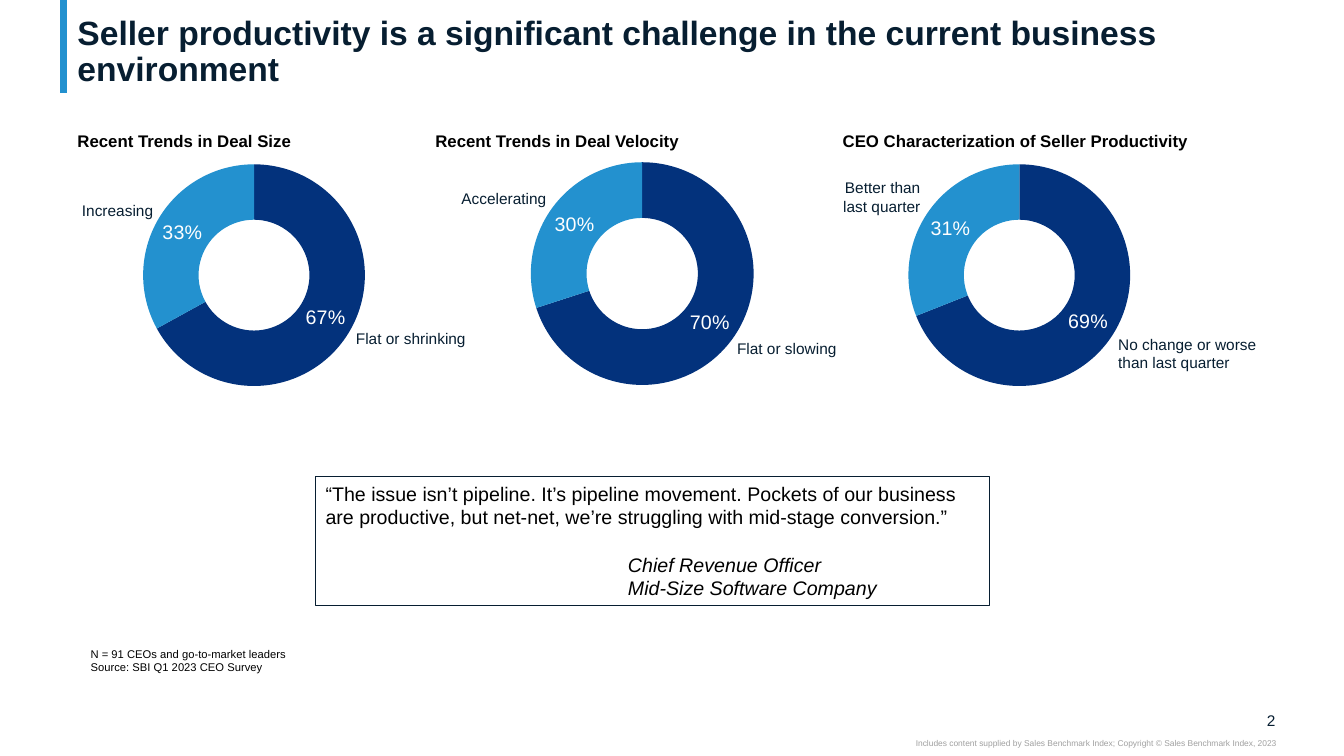
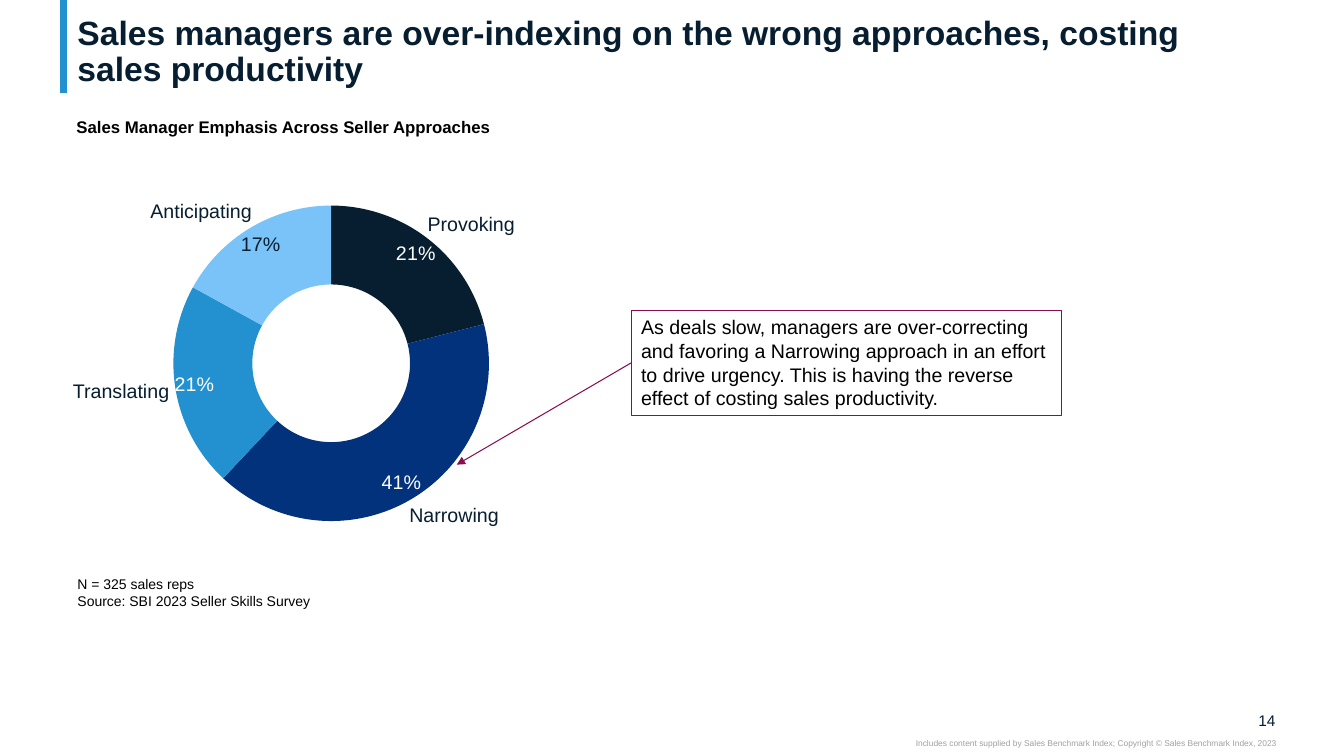
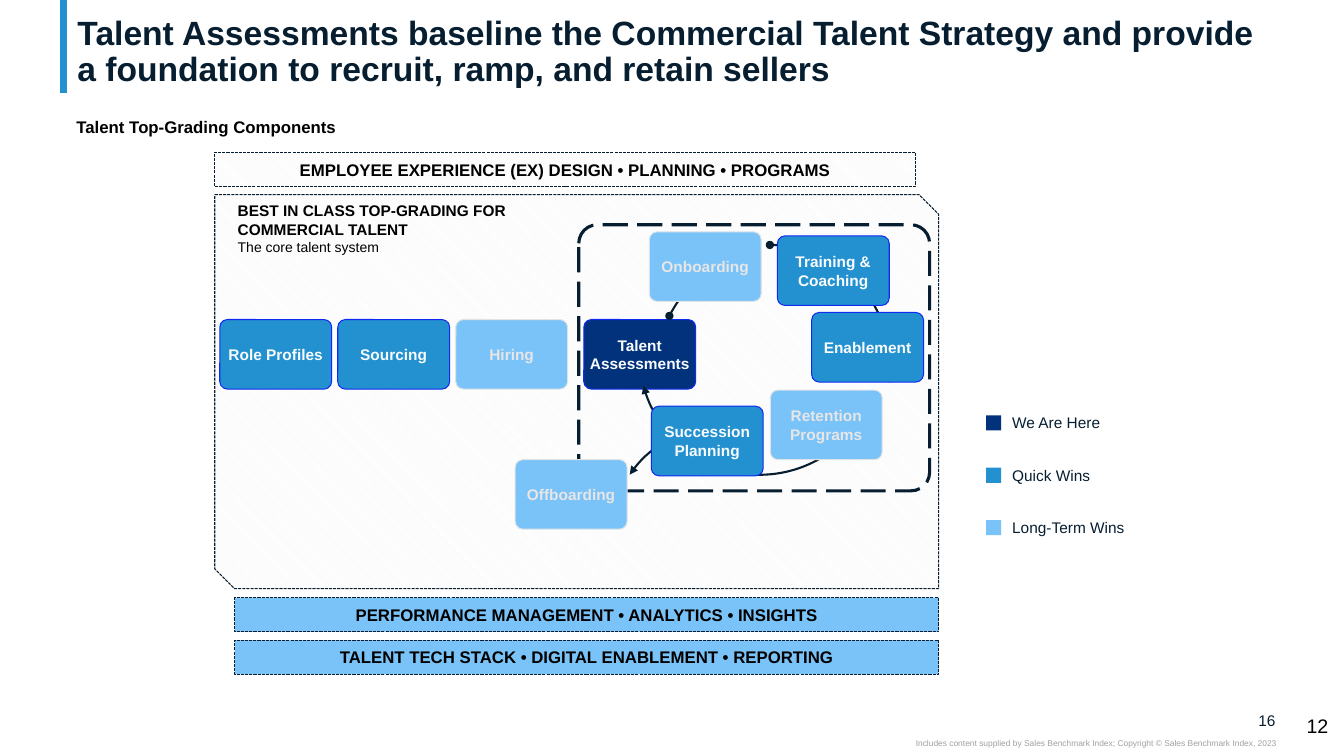
from dataclasses import dataclass
from math import cos, pi, sin
from typing import NamedTuple, Optional

from lxml import etree
from pptx import Presentation
from pptx import util as u
from pptx.chart.data import CategoryChartData
from pptx.dml.color import RGBColor
from pptx.enum import chart as charts
from pptx.enum import dml, shapes, text
from pptx.oxml.ns import qn

CELL = u.Inches(0.1)
COLUMNS, ROWS = 133.3, 75

INK = RGBColor(0x07, 0x1E, 0x31)
NAVY = RGBColor(0x03, 0x32, 0x7C)
BLUE = RGBColor(0x23, 0x91, 0xCF)
SKY = RGBColor(0x7A, 0xC3, 0xF8)
PLUM = RGBColor(0x88, 0x0E, 0x4F)
BLACK = RGBColor(0x00, 0x00, 0x00)
WHITE = RGBColor(0xFF, 0xFF, 0xFF)
NEAR_WHITE = RGBColor(0xF9, 0xFC, 0xFE)
FOOTER_GRAY = RGBColor(0xA0, 0xA0, 0xA0)
MUTED = RGBColor(0xE7, 0xE6, 0xE6)
MUTED_EDGE = RGBColor(0xE0, 0xE3, 0xE6)
VIVID_EDGE = RGBColor(0x0F, 0x2A, 0xF2)
HATCH = RGBColor(0xF2, 0xF2, 0xF2)

FONT = "Arial"
LEFT, CENTER, RIGHT = text.PP_ALIGN.LEFT, text.PP_ALIGN.CENTER, text.PP_ALIGN.RIGHT
TOP, MIDDLE, BOTTOM = text.MSO_ANCHOR.TOP, text.MSO_ANCHOR.MIDDLE, text.MSO_ANCHOR.BOTTOM
PRESET = shapes.MSO_SHAPE
COPYRIGHT = ("Includes content supplied by Sales Benchmark Index; "
             "Copyright © Sales Benchmark Index, 2023")


def grid(cells: float) -> int:
    return int(cells * CELL)


class Frame(NamedTuple):
    """Left, top, width and height in grid cells."""
    left: float
    top: float
    width: float
    height: float

    def lengths(self) -> list[int]:
        return [grid(cells) for cells in self]


class Style(NamedTuple):
    size: float
    color: RGBColor = BLACK
    bold: bool = False
    align: text.PP_ALIGN = LEFT
    anchor: text.MSO_ANCHOR = TOP
    inset: tuple[float, float] = (1, 0.5)
    wrap: bool = True


class Edge(NamedTuple):
    color: RGBColor
    width: float = 0.75
    dash: Optional[dml.MSO_LINE] = None


TITLE = Style(24, INK, True, anchor=BOTTOM, inset=(1, 0))
HEADING = Style(12, bold=True)
PAGE_NUMBER = Style(11, INK, align=RIGHT, anchor=MIDDLE, inset=(0, 0))
FOOTER = Style(6, FOOTER_GRAY, align=RIGHT, inset=(0, 0))
CALLOUT = Style(14)
LEGEND = Style(11, INK)
BAND = Style(12, BLACK, True, CENTER, MIDDLE, (1, 1))
DOTTED = Edge(INK, 0.75, dml.MSO_LINE.SQUARE_DOT)


class Slice(NamedTuple):
    value: int
    fill: RGBColor
    label: str
    place: Frame
    align: text.PP_ALIGN
    ink: RGBColor = WHITE


@dataclass(frozen=True)
class Doughnut:
    frame: Frame
    diameter: float
    label_size: float
    slices: list[Slice]
    outward: float = 0  # shift of the values, as a share of the chart


class Trend(NamedTuple):
    heading: str
    left: float
    doughnut: Doughnut


class Stage(NamedTuple):
    name: str
    left: float
    top: float
    fill: RGBColor = BLUE


class Arc(NamedTuple):
    frame: Frame
    angles: tuple[float, float]
    head: str = "oval"
    tail: str = "triangle"
    rotation: float = 0


def format_runs(para, style: Style) -> None:
    para.alignment = style.align
    for span in para.runs:
        span.font.name = FONT
        span.font.size = u.Pt(style.size)
        span.font.bold = style.bold
        span.font.color.rgb = style.color


def write(shape, content: str, style: Style) -> None:
    frame = shape.text_frame
    frame.text = content
    frame.word_wrap = style.wrap
    frame.vertical_anchor = style.anchor
    frame.margin_left = frame.margin_right = grid(style.inset[0])
    frame.margin_top = frame.margin_bottom = grid(style.inset[1])
    for para in frame.paragraphs:
        format_runs(para, style)


def add_text(page, frame: Frame, content: str, style: Style):
    box = page.shapes.add_textbox(*frame.lengths())
    write(box, content, style)
    return box


def add_preset(page, preset, frame: Frame, fill: Optional[RGBColor] = None,
               edge: Optional[Edge] = None, adjust: tuple[float, ...] = ()):
    shape = page.shapes.add_shape(preset, *frame.lengths())
    shape.shadow.inherit = False
    for index, value in enumerate(adjust):
        shape.adjustments[index] = value
    if fill is None:
        shape.fill.background()
    else:
        shape.fill.solid()
        shape.fill.fore_color.rgb = fill
    if edge is None:
        shape.line.fill.background()
    else:
        draw_edge(shape, edge)
    return shape


def draw_edge(shape, edge: Edge) -> None:
    shape.line.color.rgb = edge.color
    shape.line.width = u.Pt(edge.width)
    if edge.dash is not None:
        shape.line.dash_style = edge.dash


def hatch(shape) -> None:
    shape.fill.patterned()
    shape.fill.pattern = dml.MSO_PATTERN.LIGHT_DOWNWARD_DIAGONAL
    shape.fill.fore_color.rgb = HATCH
    shape.fill.back_color.rgb = WHITE


def add_arrowheads(shape, **ends: str) -> None:
    """Set head and then tail, in the order the schema asks for."""
    outline = shape.element.spPr.find(qn("a:ln"))
    for end, kind in ends.items():
        etree.SubElement(outline, qn(f"a:{end}End"), type=kind)


def add_line(page, start: tuple[float, float], end: tuple[float, float], edge: Edge):
    line = page.shapes.add_connector(
        shapes.MSO_CONNECTOR.STRAIGHT, *[grid(cells) for cells in (*start, *end)])
    draw_edge(line, edge)
    etree.SubElement(line.element.spPr, qn("a:effectLst"))
    return line


def manual_layout(**values: object):
    layout = etree.Element(qn("c:layout"))
    manual = etree.SubElement(layout, qn("c:manualLayout"))
    for name, value in values.items():
        etree.SubElement(manual, qn(f"c:{name}"), val=str(value))
    return layout


def add_doughnut(page, doughnut: Doughnut) -> None:
    data = CategoryChartData(number_format='0"%"')
    data.categories = [str(n + 1) for n in range(len(doughnut.slices))]
    data.add_series("Series 1", [part.value for part in doughnut.slices])
    chart = page.shapes.add_chart(
        charts.XL_CHART_TYPE.DOUGHNUT, *doughnut.frame.lengths(), data).chart
    chart.has_legend = chart.has_title = False
    chart.font.name, chart.font.size = FONT, u.Pt(10)
    chart.font.color.rgb = INK
    chart.plots[0].vary_by_categories = False

    area = chart.element.find(".//" + qn("c:plotArea"))
    for automatic in area.findall(qn("c:layout")):
        area.remove(automatic)
    wide = doughnut.diameter / doughnut.frame.width
    high = doughnut.diameter / doughnut.frame.height
    area.insert(0, manual_layout(
        layoutTarget="inner", xMode="edge", yMode="edge",
        x=(1 - wide) / 2, y=(1 - high) / 2, w=wide, h=high))

    series = chart.plots[0].series[0]
    total, before = sum(part.value for part in doughnut.slices), 0
    for index, part in enumerate(doughnut.slices):
        point = series.points[index]
        point.format.fill.solid()
        point.format.fill.fore_color.rgb = part.fill
        font = point.data_label.font
        font.name, font.size = FONT, u.Pt(14)
        font.color.rgb = part.ink
        angle = 2 * pi * (before + part.value / 2) / total
        before += part.value
        label = series.data_labels._element.findall(qn("c:dLbl"))[index]
        number = etree.Element(qn("c:numFmt"), formatCode='0"%"', sourceLinked="0")
        label.insert(1, number)
        if doughnut.outward:
            label.insert(1, manual_layout(x=doughnut.outward * sin(angle),
                                          y=-doughnut.outward * cos(angle)))
        add_text(page, part.place, part.label,
                 Style(doughnut.label_size, INK, align=part.align,
                       anchor=MIDDLE, inset=(0, 0), wrap=False))
    for leader in chart.element.iter(qn("c:showLeaderLines")):
        leader.set("val", "0")


def add_page(deck, title: str, number: int):
    """Start a slide with the accent bar, title, page number and footer."""
    page = deck.slides.add_slide(deck.slide_layouts[6])
    add_line(page, (6.3, 0), (6.3, 9.2), Edge(BLUE, 5))
    add_text(page, Frame(123.2, 70.5, 3.3, 1.9), str(number), PAGE_NUMBER)
    add_text(page, Frame(75, 73.2, 51.6, 1), COPYRIGHT, FOOTER)
    heading = add_text(page, Frame(6.7, 0.4, 119.9, 8.4), title, TITLE)
    heading.text_frame.paragraphs[0].line_spacing = 0.9
    return page


def add_heading(page, content: str) -> None:
    add_text(page, Frame(6.6, 11.1, 63.7, 3), content, HEADING)


TRENDS = [
    Trend("Recent Trends in Deal Size", 6.7, Doughnut(Frame(10.6, 15.4, 29.2, 23.8), 22, 11, [
        Slice(67, NAVY, "Flat or shrinking", Frame(35.3, 32.7, 11.2, 1.8), LEFT),
        Slice(33, BLUE, "Increasing", Frame(8, 20, 7.2, 1.8), RIGHT)])),
    Trend("Recent Trends in Deal Velocity", 42.2, Doughnut(Frame(49.1, 15.2, 29.2, 23.9), 22.1, 11, [
        Slice(70, NAVY, "Flat or slowing", Frame(73.1, 33.7, 10.2, 1.8), LEFT),
        Slice(30, BLUE, "Accelerating", Frame(45.4, 18.8, 8.8, 1.8), RIGHT)])),
    Trend("CEO Characterization of Seller Productivity", 82.6, Doughnut(Frame(86.5, 15.4, 29.2, 23.8), 22, 11, [
        Slice(69, NAVY, "No change or worse\nthan last quarter", Frame(110.9, 33.2, 14.5, 3.7), LEFT),
        Slice(31, BLUE, "Better than\nlast quarter", Frame(83.2, 17.7, 8.1, 3.7), RIGHT)])),
]

EMPHASIS = Doughnut(Frame(16.3, 19.5, 33.1, 33.1), 31.3, 14, [
    Slice(21, INK, "Provoking", Frame(42.4, 21, 8.9, 2.3), LEFT),
    Slice(41, NAVY, "Narrowing", Frame(40.6, 49.9, 9.4, 2.3), LEFT),
    Slice(21, BLUE, "Translating", Frame(7.2, 37.6, 9.6, 2.3), RIGHT),
    Slice(17, SKY, "Anticipating", Frame(14.3, 19.8, 10.7, 2.3), RIGHT, INK)], outward=0.06)

PIPELINE = [
    Stage("Role Profiles", 21.8, 31.7),
    Stage("Sourcing", 33.5, 31.7),
    Stage("Hiring", 45.2, 31.7, SKY),
    Stage("Talent Assessments", 57.9, 31.7, NAVY),
]
CYCLE = [
    Stage("Retention Programs", 76.4, 38.7, SKY),
    Stage("Succession Planning", 64.6, 40.3),
    Stage("Training & Coaching", 77.1, 23.4),
    Stage("Enablement", 80.5, 31),
    Stage("Offboarding", 51.1, 45.6, SKY),
    Stage("Onboarding", 64.4, 23, SKY),
]
ARCS = [
    Arc(Frame(63.4, 23.2, 23.9, 23.9), (14.72, 98.98)),
    Arc(Frame(65.1, 24.8, 23.9, 23.9), (124.14, 136.06)),
    Arc(Frame(64.4, 24.3, 23.9, 23.9), (168.45, 11.36), rotation=349.3),
    Arc(Frame(60.9, 42.2, 22.6, 19.8), (124.33, 144), "triangle", "none"),
]
LOWER_BANDS = ["PERFORMANCE MANAGEMENT • ANALYTICS • INSIGHTS",
               "TALENT TECH STACK • DIGITAL ENABLEMENT • REPORTING"]
KEY = [("We Are Here", NAVY), ("Quick Wins", BLUE), ("Long-Term Wins", SKY)]


def add_stage(page, stage: Stage) -> None:
    muted = stage.fill == SKY
    box = add_preset(page, PRESET.ROUNDED_RECTANGLE, Frame(stage.left, stage.top, 11.1, 6.9),
                     stage.fill, Edge(MUTED_EDGE if muted else VIVID_EDGE), (0.11,))
    write(box, stage.name,
          Style(11, MUTED if muted else NEAR_WHITE, True, CENTER, MIDDLE, (0, 0)))


def build_challenge(deck) -> None:
    page = add_page(deck, "Seller productivity is a significant challenge in the "
                          "current business environment", 2)
    for trend in TRENDS:
        add_text(page, Frame(trend.left, 12.5, 39.7, 3), trend.heading, HEADING)
        add_doughnut(page, trend.doughnut)
    quote = add_preset(page, PRESET.RECTANGLE, Frame(31.3, 47.3, 66.8, 12.8), edge=Edge(INK))
    write(quote, "“The issue isn’t pipeline. It’s pipeline movement. Pockets of our business "
                 "are productive, but net-net, we’re struggling with mid-stage conversion.”\n"
                 "Chief Revenue Officer\nMid-Size Software Company", CALLOUT)
    speaker = quote.text_frame.paragraphs[1:]
    speaker[0].space_before = u.Pt(17)
    for para in speaker:
        para._p.get_or_add_pPr().set("marL", str(grid(30)))
        para.runs[0].font.italic = True
    add_text(page, Frame(8, 63.7, 40.9, 3.7),
             "N = 91 CEOs and go-to-market leaders\nSource: SBI Q1 2023 CEO Survey", Style(8))


def build_emphasis(deck) -> None:
    page = add_page(deck, "Sales managers are over-indexing on the wrong approaches, "
                          "costing sales productivity", 14)
    add_heading(page, "Sales Manager Emphasis Across Seller Approaches")
    add_doughnut(page, EMPHASIS)
    add_text(page, Frame(6.7, 56.6, 48.5, 4.4),
             "N = 325 sales reps\nSource: SBI 2023 Seller Skills Survey", Style(10))
    callout = add_preset(page, PRESET.RECTANGLE, Frame(62.6, 30.8, 42.7, 10.4), edge=Edge(PLUM))
    write(callout, "As deals slow, managers are over-correcting and favoring a Narrowing "
                   "approach in an effort to drive urgency. This is having the reverse "
                   "effect of costing sales productivity.", CALLOUT)
    arrow = add_line(page, (62.6, 36), (45.3, 46.1), Edge(PLUM))
    arrow.begin_connect(callout, 1)
    add_arrowheads(arrow, tail="triangle")


def build_talent(deck) -> None:
    page = add_page(deck, "Talent Assessments baseline the Commercial Talent Strategy and "
                          "provide a foundation to recruit, ramp, and retain sellers", 16)
    add_heading(page, "Talent Top-Grading Components")
    add_text(page, Frame(128.6, 70.3, 4.2, 3.4), "12", Style(14, wrap=False))
    for row, (label, color) in enumerate(KEY):
        top = 41.2 + 5.2 * row
        add_preset(page, PRESET.RECTANGLE, Frame(97.8, top, 1.5, 1.5), color)
        add_text(page, Frame(99.4, top - 0.7, 15.7, 2.9), label, LEGEND)

    hatch(add_preset(page, PRESET.SNIP_2_DIAG_RECTANGLE, Frame(21.3, 19.3, 71.8, 39.1),
                     edge=DOTTED, adjust=(0, 0.05)))
    upper = add_preset(page, PRESET.RECTANGLE, Frame(21.3, 15.1, 69.5, 3.4), edge=DOTTED)
    hatch(upper)
    write(upper, "EMPLOYEE EXPERIENCE (EX) DESIGN • PLANNING • PROGRAMS", BAND)
    for row, label in enumerate(LOWER_BANDS):
        band = add_preset(page, PRESET.RECTANGLE, Frame(23.3, 59.3 + 4.2 * row, 69.8, 3.4),
                          SKY, DOTTED)
        write(band, label, BAND)

    add_preset(page, PRESET.ROUNDED_RECTANGLE, Frame(57.4, 22.3, 34.8, 26.4),
               edge=Edge(INK, 2.25, dml.MSO_LINE.LONG_DASH), adjust=(0.07,))
    for stage in PIPELINE:
        add_stage(page, stage)
    for arc in ARCS:
        curve = add_preset(page, PRESET.ARC, arc.frame, edge=Edge(INK, 1.5), adjust=arc.angles)
        curve.rotation = arc.rotation
        add_arrowheads(curve, head=arc.head, tail=arc.tail)
    for stage in CYCLE:
        add_stage(page, stage)

    core = add_text(page, Frame(22.6, 19.5, 37.7, 6.4),
                    "BEST IN CLASS TOP-GRADING FOR COMMERCIAL TALENT\nThe core talent system",
                    Style(11, bold=True))
    format_runs(core.text_frame.paragraphs[1], Style(10))


def main() -> None:
    deck = Presentation()
    deck.slide_width, deck.slide_height = grid(COLUMNS), grid(ROWS)
    for build in (build_challenge, build_emphasis, build_talent):
        build(deck)
    deck.save("out.pptx")


if __name__ == "__main__":
    main()
